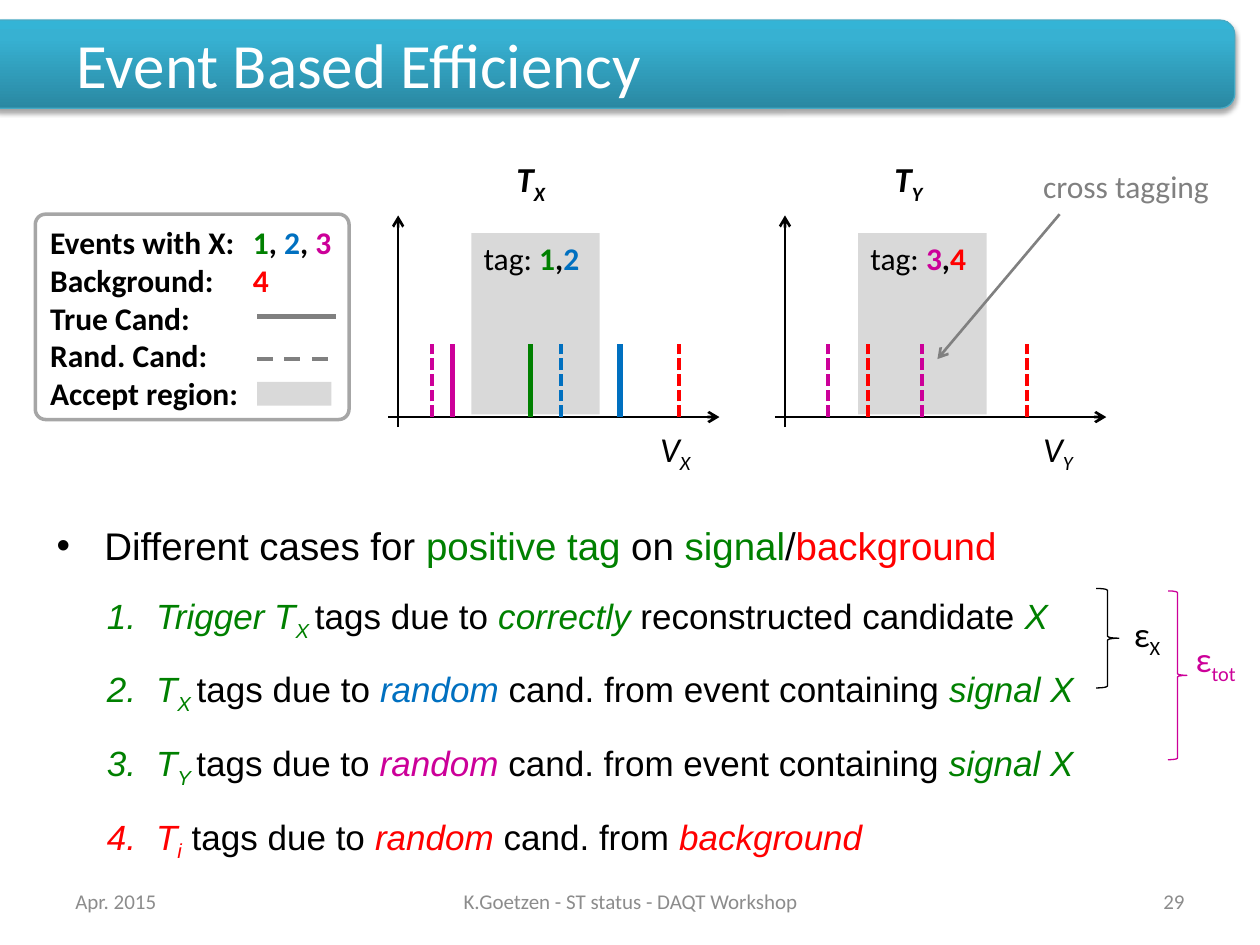
import pptx
import pptx.util
import pptx.dml.color
import pptx.enum.dml
import pptx.enum.shapes
import pptx.enum.text
import pptx.oxml
from dataclasses import dataclass

Inches = pptx.util.Inches
Pt = pptx.util.Pt
SHAPE = pptx.enum.shapes.MSO_SHAPE
DASH = pptx.enum.dml.MSO_LINE
ALIGN = pptx.enum.text.PP_ALIGN
ANCHOR = pptx.enum.text.MSO_ANCHOR
NS = 'xmlns:a="http://schemas.openxmlformats.org/drawingml/2006/main"'


@dataclass(frozen=True)
class Theme:
    black: str = "000000"
    white: str = "FFFFFF"
    green: str = "008000"
    blue: str = "0070C0"
    magenta: str = "CC0099"
    red: str = "FF0000"
    region: str = "D9D9D9"
    frame: str = "A6A6A6"
    gray: str = "808080"
    footer: str = "8C8C8C"
    banner_edge: str = "46AAC5"
    banner: tuple = ((0, "2A88A2"), (80, "37B1D2"), (100, "34B4D6"))
    heading_font: str = "Calibri"
    body_font: str = "Arial"
    title_size: int = 36
    lead_size: int = 22
    item_size: int = 20
    label_size: int = 18
    footer_size: int = 12


T = Theme()

TITLE = [("Event Based Efficiency", T.white, "")]
LEAD = [("Different cases for ", T.black, ""), ("positive tag ", T.green, ""), ("on ", T.black, ""),
        ("signal", T.green, ""), ("/", T.black, ""), ("background", T.red, "")]


def random_case(trigger, colour):
    return [("T", T.green, "i"), (trigger + " ", T.green, "i_"), ("tags due to ", T.black, ""),
            ("random ", colour, "i"), ("cand. from event containing", T.black, ""),
            (" signal X", T.green, "i")]


CASES = [
    [("Trigger T", T.green, "i"), ("X ", T.green, "i_"), ("tags due to ", T.black, ""),
     ("correctly", T.green, "i"), (" reconstructed candidate ", T.black, ""), ("X", T.green, "i")],
    random_case("X", T.blue),
    random_case("Y", T.magenta),
    [("T", T.red, "i"), ("i", T.red, "i_"), (" tags due to ", T.black, ""), ("random", T.red, "i"),
     (" cand. from ", T.black, ""), ("background", T.red, "i")],
]
LEGEND = [
    [("Events with X:\t", T.black, "b"), ("1", T.green, "b"), (", ", T.black, "b"),
     ("2", T.blue, "b"), (", ", T.black, "b"), ("3", T.magenta, "b")],
    [("Background:\t", T.black, "b"), ("4", T.red, "b")],
    [("True Cand:", T.black, "b")],
    [("Rand. Cand:", T.black, "b")],
    [("Accept region:", T.black, "b")],
]
PLOTS = [
    {"name": "X", "left": 3.08, "trigger_x": 4.0, "variable_x": 5.14,
     "tags": (("1", T.green), ("2", T.blue)),
     "candidates": ((3.43, T.magenta, False), (3.59, T.magenta, True), (4.21, T.green, True),
                    (4.45, T.blue, False), (4.92, T.blue, True), (5.39, T.red, False))},
    {"name": "Y", "left": 6.15, "trigger_x": 7.0, "variable_x": 8.18,
     "tags": (("3", T.magenta), ("4", T.red)),
     "candidates": ((6.57, T.magenta, False), (6.89, T.red, False),
                    (7.32, T.magenta, False), (8.15, T.red, False))},
]
EFFICIENCIES = [
    ("X", T.black, (8.9, 4.81, 0.43, 0.44), (8.7, 4.67, 0.18, 0.79)),
    ("tot", T.magenta, (9.39, 5.01, 0.55, 0.44), (9.27, 4.69, 0.15, 1.34)),
]
FOOTERS = [
    ("Apr. 2015", 0.5, 2.33, ALIGN.LEFT),
    ("K.Goetzen - ST status - DAQT Workshop", 3.42, 3.17, ALIGN.CENTER),
    ("29", 7.17, 2.33, ALIGN.RIGHT),
]

deck = pptx.Presentation()
deck.slide_width, deck.slide_height = Inches(10), Inches(7.5)
slide = deck.slides.add_slide(deck.slide_layouts[6])


def rgb(colour):
    return pptx.dml.color.RGBColor.from_string(colour)


def xml(markup):
    return pptx.oxml.parse_xml(markup.replace(">", f" {NS}>", 1) if "/>" not in markup.split(">")[0] + ">"
                               else markup.replace("/>", f" {NS}/>", 1))


def write(paragraph, runs, size, font):
    for words, colour, style in runs:
        run = paragraph.add_run()
        run.text = words
        run.font.size, run.font.name = Pt(size), font
        run.font.color.rgb = rgb(colour)
        run.font.bold, run.font.italic = "b" in style, "i" in style
        if "_" in style:
            run.font._element.set("baseline", "-25000")


def text(box, paragraphs, size, font=T.heading_font, wrap=False, anchor=ANCHOR.TOP, align=None):
    frame = slide.shapes.add_textbox(*map(Inches, box)).text_frame
    frame.word_wrap, frame.vertical_anchor = wrap, anchor
    for index, runs in enumerate(paragraphs):
        paragraph = frame.add_paragraph() if index else frame.paragraphs[0]
        paragraph.alignment = align
        write(paragraph, runs, size, font)
    return frame


def shape(kind, box, fill=None, line=None, width=0.75):
    part = slide.shapes.add_shape(kind, *map(Inches, box))
    part.shadow.inherit = False
    if fill:
        part.fill.solid()
        part.fill.fore_color.rgb = rgb(fill)
    else:
        part.fill.background()
    if line:
        part.line.color.rgb, part.line.width = rgb(line), Pt(width)
    else:
        part.line.fill.background()
    return part


def stroke(x1, y1, x2, y2, colour, width, dash=None, arrow=False):
    part = slide.shapes.add_connector(pptx.enum.shapes.MSO_CONNECTOR.STRAIGHT,
                                      *map(Inches, (x1, y1, x2, y2)))
    part.line.color.rgb, part.line.width = rgb(colour), Pt(width)
    if dash:
        part.line.dash_style = dash
    if arrow:
        part.line._get_or_add_ln().append(xml('<a:tailEnd type="arrow"/>'))
    part._element.spPr.append(xml("<a:effectLst/>"))


def draw_banner():
    banner = shape(SHAPE.ROUNDED_RECTANGLE, (-0.12, 0.16, 9.92, 0.7), T.white, T.banner_edge)
    properties = banner._element.spPr
    stops = "".join(f'<a:gs pos="{at * 1000}"><a:srgbClr val="{colour}"/></a:gs>' for at, colour in T.banner)
    solid = properties.find(pptx.oxml.ns.qn("a:solidFill"))
    properties.replace(solid, xml(f'<a:gradFill><a:gsLst>{stops}</a:gsLst><a:lin ang="16200000"/></a:gradFill>'))
    effects = properties.find(pptx.oxml.ns.qn("a:effectLst"))
    effects.append(xml(f'<a:outerShdw blurRad="{Pt(3.1)}" dist="{Pt(1.8)}" dir="5400000" rotWithShape="0">'
                       f'<a:srgbClr val="{T.black}"><a:alpha val="35000"/></a:srgbClr></a:outerShdw>'))
    text((0.51, 0.23, 8.99, 0.54), [TITLE], T.title_size, wrap=True, anchor=ANCHOR.MIDDLE)


def draw_cases():
    frame = text((0.35, 4.06, 9.29, 3.46), [LEAD], T.lead_size, T.body_font, wrap=True)
    for case in CASES:
        write(frame.add_paragraph(), case, T.item_size, T.body_font)
    for index, paragraph in enumerate(frame.paragraphs):
        paragraph.level = min(index, 1)
        paragraph.space_before = paragraph.space_after = Pt(6)
        paragraph.line_spacing = 1.1
        margin, hang = (0.79, 0.39) if index else (0.38, 0.38)
        properties = paragraph._p.get_or_add_pPr()
        properties.set("marL", str(Inches(margin)))
        properties.set("indent", str(-Inches(hang)))
        properties.append(xml(f'<a:buFont typeface="{T.body_font}"/>'))
        properties.append(xml('<a:buAutoNum type="arabicPeriod"/>' if index else '<a:buChar char="•"/>'))


def draw_plot(plot):
    left, base = plot["left"], 3.31
    region = left + 0.66
    stroke(left, base, left + 2.63, base, T.black, 1.5, arrow=True)
    stroke(left + 0.08, 3.39, left + 0.08, 1.71, T.black, 1.5, arrow=True)
    shape(SHAPE.RECTANGLE, (region, 1.85, 1.02, 1.44), T.region)
    for letter, x, y, style in (("T", plot["trigger_x"], 1.2, "bi"), ("V", plot["variable_x"], 3.34, "i")):
        text((x, y, 0.45, 0.44), [[(letter, T.black, style), (plot["name"], T.black, style + "_")]], T.item_size)
    (first, first_colour), (second, second_colour) = plot["tags"]
    text((region, 1.85, 0.97, 0.4), [[("tag: ", T.black, ""), (first, first_colour, "b"),
                                      (",", T.black, "b"), (second, second_colour, "b")]], T.label_size)
    for x, colour, is_true in plot["candidates"]:
        stroke(x, base, x, 2.73, colour, 3 if is_true else 2.25, None if is_true else DASH.SQUARE_DOT)


def draw_legend():
    frame = text((0.3, 1.72, 2.6, 1.62), LEGEND, T.label_size, wrap=True)
    for paragraph in frame.paragraphs[:2]:
        paragraph._p.get_or_add_pPr().append(
            xml(f'<a:tabLst><a:tab pos="{Inches(1.61)}" algn="l"/></a:tabLst>'))
    shape(SHAPE.ROUNDED_RECTANGLE, (0.28, 1.7, 2.49, 1.63), line=T.frame, width=2).adjustments[0] = 0.05
    stroke(2.04, 2.51, 2.67, 2.51, T.gray, 3)
    stroke(2.04, 2.85, 2.67, 2.85, T.gray, 2.25, DASH.DASH)
    shape(SHAPE.RECTANGLE, (2.04, 3.03, 0.59, 0.19), T.region)


draw_banner()
draw_cases()
for plot in PLOTS:
    draw_plot(plot)
for index, colour, label, brace in EFFICIENCIES:
    text(label, [[("ε", colour, ""), (index, colour, "_")]], T.item_size)
    shape(SHAPE.RIGHT_BRACE, brace, line=colour)
draw_legend()
text((8.18, 1.28, 1.53, 0.4), [[("cross tagging", T.gray, "")]], T.label_size)
stroke(8.41, 1.7, 7.44, 2.85, T.gray, 1.5, arrow=True)
for words, left, width, align in FOOTERS:
    text((left, 6.95, width, 0.4), [[(words, T.footer, "")]], T.footer_size,
         wrap=True, anchor=ANCHOR.MIDDLE, align=align)

deck.save("out.pptx")
